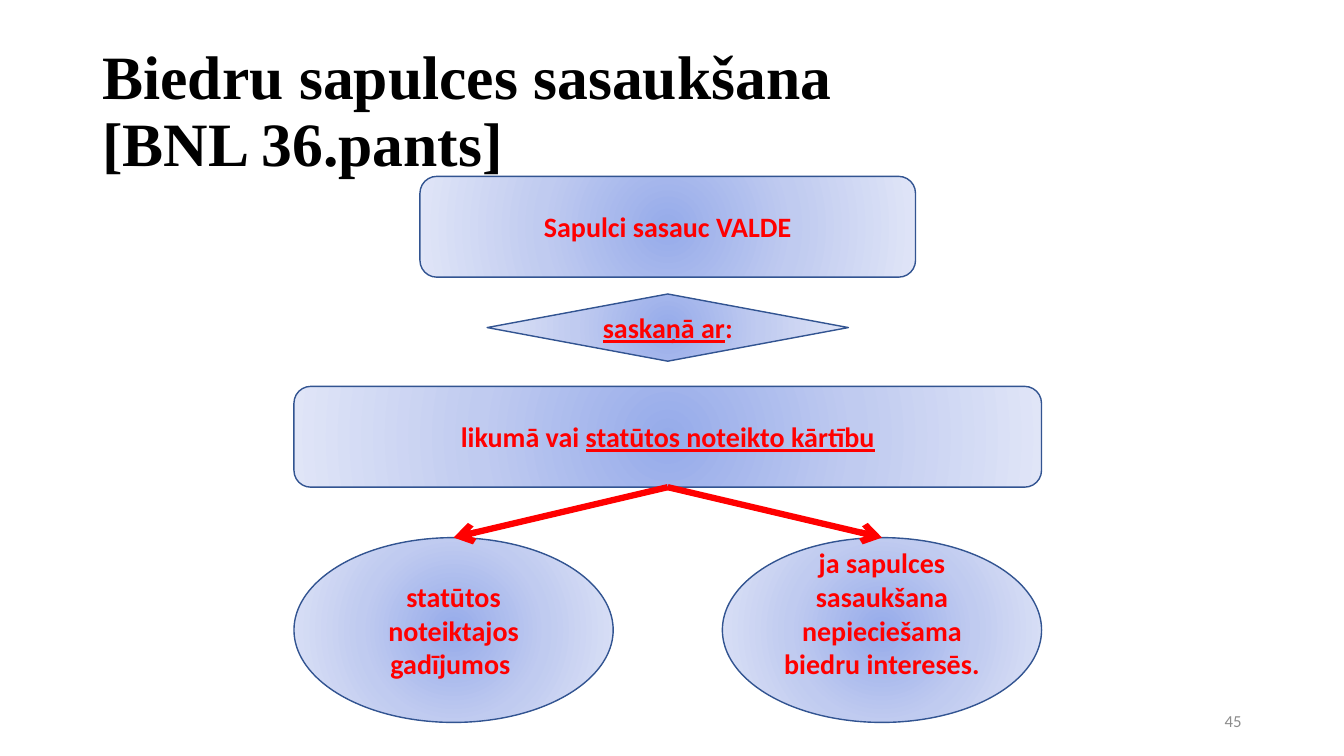
from lxml.etree import SubElement
from pptx import Presentation
from pptx.dml.color import RGBColor
from pptx.enum.shapes import MSO_CONNECTOR, MSO_SHAPE as Shape
from pptx.enum.text import MSO_ANCHOR, MSO_AUTO_SIZE, PP_ALIGN as Align
from pptx.oxml import parse_xml
from pptx.oxml.ns import nsdecls, qn
from pptx.util import Pt

PX = 9525  # 96 px to the inch
RED = "FF0000"
OUTLINE = "325491"
STOPS = [(0, "96ABEA"), (50, "C0CBF0"), (100, "E0E5F7")]


def color(hex_code):
    return RGBColor.from_string(hex_code)


def write(frame, text, *, size=20, font="Calibri", ink=RED, bold=True,
          align=Align.CENTER, spacing=1.0):
    """Fill a frame; _underscores_ enclose underlined words."""
    frame.word_wrap = True
    frame.auto_size = MSO_AUTO_SIZE.NONE
    frame.vertical_anchor = MSO_ANCHOR.MIDDLE
    paragraph = frame.paragraphs[0]
    paragraph.alignment = align
    paragraph.line_spacing = spacing
    for part_index, part in enumerate(text.split("_")):
        for line_index, line in enumerate(part.split("\n")):
            if line_index:
                paragraph.add_line_break()
            if not line:
                continue
            run = paragraph.add_run()
            run.text = line
            run.font.size = Pt(size)
            run.font.name = font
            run.font.bold = bold
            run.font.underline = part_index % 2 == 1
            run.font.color.rgb = color(ink)


deck = Presentation()
deck.slide_width, deck.slide_height = 1280 * PX, 720 * PX
slide = deck.slides.add_slide(deck.slide_layouts[5])

title = slide.shapes.title
title.left, title.top, title.width, title.height = [
    v * PX for v in (88, 38, 1104, 139)]
write(title.text_frame, "Biedru sapulces sasaukšana \n[BNL 36.pants]", size=44,
      font="Times New Roman", ink="000000", align=Align.LEFT, spacing=0.9)

page_number = slide.shapes.add_textbox(904 * PX, 667 * PX, 288 * PX, 38 * PX)
write(page_number.text_frame, "45", size=12, ink="8C8C8C", bold=False,
      align=Align.RIGHT)

STEPS = [
    (Shape.FLOWCHART_ALTERNATE_PROCESS, 400, 168, 472, 96, "Sapulci sasauc VALDE"),
    (Shape.FLOWCHART_DECISION, 464, 280, 344, 64, "_saskaņā ar_:"),
    (Shape.FLOWCHART_ALTERNATE_PROCESS, 280, 368, 712, 96,
     "likumā vai _statūtos noteikto kārtību_"),
    (Shape.FLOWCHART_CONNECTOR, 280, 512, 304, 176,
     "statūtos noteiktajos gadījumos "),
    (Shape.FLOWCHART_CONNECTOR, 688, 512, 304, 176,
     "ja sapulces sasaukšana nepieciešama biedru interesēs."),
]
gradient_stops = "".join(
    f'<a:gs pos="{pos * 1000}"><a:srgbClr val="{tone}"/></a:gs>' for pos, tone in STOPS)
radial_fill = (
    f'<a:gradFill {nsdecls("a")} rotWithShape="1"><a:gsLst>{gradient_stops}</a:gsLst>'
    '<a:path path="circle"><a:fillToRect l="50000" t="50000" r="50000" b="50000"/>'
    '</a:path></a:gradFill>')

steps = []
for kind, left, top, width, height, text in STEPS:
    step = slide.shapes.add_shape(kind, left * PX, top * PX, width * PX, height * PX)
    step.shadow.inherit = False
    step.fill.gradient()
    properties = step._element.spPr
    properties.replace(properties.find(qn("a:gradFill")), parse_xml(radial_fill))
    step.line.color.rgb = color(OUTLINE)
    step.line.width = Pt(1)
    write(step.text_frame, text)
    steps.append(step)

procedure, statute_cases, member_interest = steps[2:]
member_interest.text_frame.margin_bottom = 37 * PX  # lifts the text by half a line

for outcome in (statute_cases, member_interest):
    arrow = slide.shapes.add_connector(MSO_CONNECTOR.STRAIGHT, 0, 0, 0, 0)
    arrow.begin_connect(procedure, 2)
    arrow.end_connect(outcome, 0)
    arrow.line.color.rgb = color(RED)
    arrow.line.width = Pt(4.5)
    SubElement(arrow.line._get_or_add_ln(), qn("a:tailEnd"), type="arrow")
    SubElement(arrow._element.spPr, qn("a:effectLst"))

deck.save("out.pptx")
